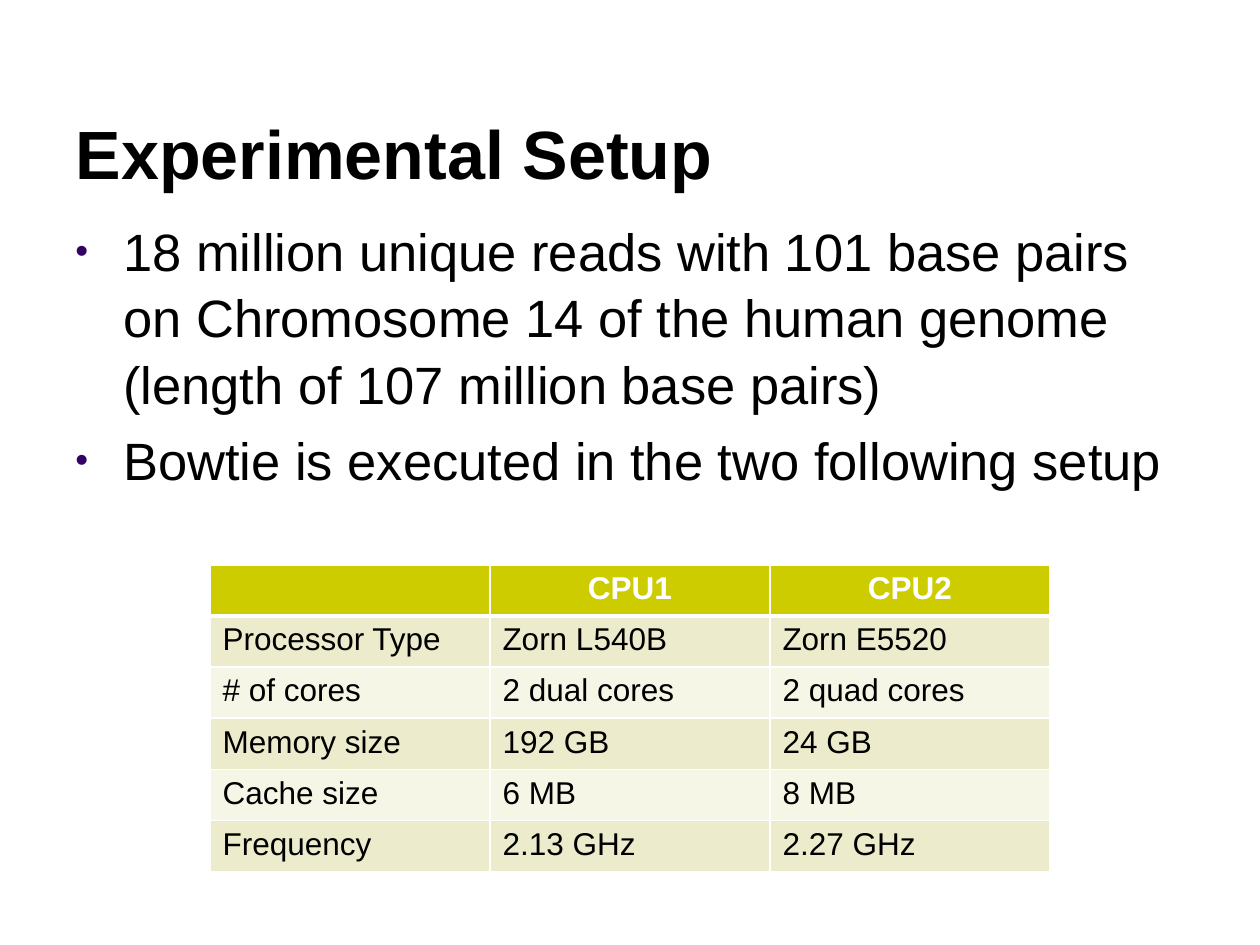
from dataclasses import dataclass

from lxml import etree
from pptx import Presentation
from pptx import util as u
from pptx.dml.color import RGBColor
from pptx.enum import text
from pptx.oxml.ns import qn


@dataclass(frozen=True)
class Theme:
    font: str = "Arial"
    ink: str = "000000"
    paper: str = "FFFFFF"
    bullet: str = "330066"
    header: str = "CCCC00"
    bands: tuple = ("ECECCC", "F6F6E7")
    title_size: int = 39
    body_size: int = 30
    table_size: int = 18
    rule: int = 1
    header_rule: int = 3


THEME = Theme()
COLUMNS, ROWS = 120, 90  # grid of the slide, twelve units to the inch

POINTS = [
    "18 million unique reads with 101 base pairs on Chromosome 14 of the "
    "human genome (length of 107 million base pairs)",
    "Bowtie is executed in the two following setup",
]
SETUPS = [
    ["", "CPU1", "CPU2"],
    ["Processor Type", "Zorn L540B", "Zorn E5520"],
    ["# of cores", "2 dual cores", "2 quad cores"],
    ["Memory size", "192 GB", "24 GB"],
    ["Cache size", "6 MB", "8 MB"],
    ["Frequency", "2.13 GHz", "2.27 GHz"],
]


def grid_box(prs, column, row, width, height):
    across, down = prs.slide_width / COLUMNS, prs.slide_height / ROWS
    return [u.Emu(round(n)) for n in
            (column * across, row * down, width * across, height * down)]


def style(paragraph, size, color, bold=False):
    font = paragraph.font
    font.name, font.size, font.bold = THEME.font, u.Pt(size), bold
    font.color.rgb = RGBColor.from_string(color)


def add_bullet(paragraph):
    props = paragraph._p.get_or_add_pPr()
    indent = u.Inches(0.38)
    props.set("marL", str(indent))
    props.set("indent", str(-indent))
    color = etree.SubElement(props, qn("a:buClr"))
    etree.SubElement(color, qn("a:srgbClr"), val=THEME.bullet)
    etree.SubElement(props, qn("a:buSzPct"), val="70000")
    etree.SubElement(props, qn("a:buFont"), typeface=THEME.font)
    etree.SubElement(props, qn("a:buChar"), char="•")


def add_borders(cell, widths):
    props = cell._tc.get_or_add_tcPr()
    for side, width in zip("LRTB", widths):
        line = etree.SubElement(props, qn(f"a:ln{side}"), w=str(u.Pt(width)))
        fill = etree.SubElement(line, qn("a:solidFill"))
        etree.SubElement(fill, qn("a:srgbClr"), val=THEME.paper)


def place_title(slide, box, wording):
    title = slide.shapes.title
    title.left, title.top, title.width, title.height = box
    frame = title.text_frame
    frame.text = wording
    frame.auto_size = text.MSO_AUTO_SIZE.NONE
    frame.vertical_anchor = text.MSO_ANCHOR.BOTTOM
    heading = frame.paragraphs[0]
    heading.alignment = text.PP_ALIGN.LEFT
    style(heading, THEME.title_size, THEME.ink, bold=True)


def place_points(slide, box, points):
    frame = slide.shapes.add_textbox(*box).text_frame
    frame.word_wrap = True
    for i, wording in enumerate(points):
        point = frame.add_paragraph() if i else frame.paragraphs[0]
        point.text = wording
        add_bullet(point)
        point.line_spacing = 1.05
        if i:
            point.space_before = u.Pt(0.2 * THEME.body_size)
        style(point, THEME.body_size, THEME.ink)


def place_setups(slide, box, setups):
    table = slide.shapes.add_table(len(setups), len(setups[0]), *box).table
    for r, values in enumerate(setups):
        is_header = r == 0
        top = THEME.header_rule if r == 1 else THEME.rule
        bottom = THEME.header_rule if is_header else THEME.rule
        fill = THEME.header if is_header else THEME.bands[(r - 1) % 2]
        for c, value in enumerate(values):
            cell = table.cell(r, c)
            add_borders(cell, (THEME.rule, THEME.rule, top, bottom))
            cell.fill.solid()
            cell.fill.fore_color.rgb = RGBColor.from_string(fill)
            cell.text = value
            entry = cell.text_frame.paragraphs[0]
            if is_header:
                entry.alignment = text.PP_ALIGN.CENTER
            style(entry, THEME.table_size,
                  THEME.paper if is_header else THEME.ink, is_header)


def main():
    prs = Presentation()
    prs.slide_width, prs.slide_height = u.Inches(10), u.Inches(7.5)
    slide = prs.slides.add_slide(prs.slide_layouts.get_by_name("Title Only"))

    # Heading, bullet points, then the table of the two machines
    place_title(slide, grid_box(prs, 6, 9, 108, 10), "Experimental Setup")
    place_points(slide, grid_box(prs, 6, 20, 108, 62), POINTS)
    place_setups(slide, grid_box(prs, 20, 53.8, 80, 29.2), SETUPS)

    prs.save("out.pptx")


if __name__ == "__main__":
    main()
